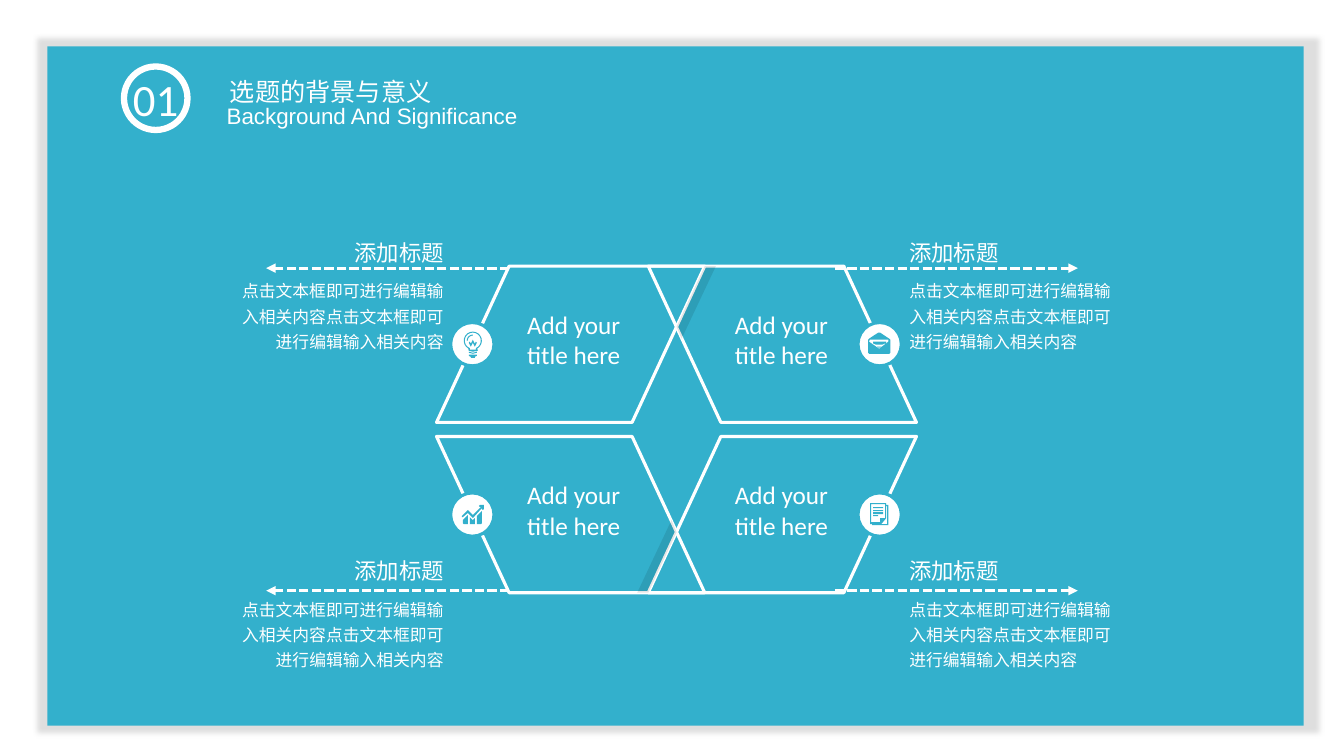
from dataclasses import dataclass
from math import cos, radians, sin

from lxml import etree
from pptx import Presentation
from pptx import util as u
from pptx.dml.color import RGBColor
from pptx.enum import dml, shapes, text
from pptx.oxml.ns import qn

PX = 9144  # EMU per px, 100 px to the inch


@dataclass(frozen=True)
class Theme:
    teal: RGBColor = RGBColor(0x33, 0xB0, 0xCC)
    white: RGBColor = RGBColor(0xFF, 0xFF, 0xFF)
    black: RGBColor = RGBColor(0, 0, 0)
    shadow: str = "A6A6A6"
    latin: str = "Calibri"
    sans: str = "Arial"
    chinese: str = "Noto Sans CJK SC"
    number: int = 32
    title: int = 18
    heading: int = 16
    body: int = 12
    thin: float = 2.25
    thick: float = 4.5


THEME = Theme()
LEFT, RIGHT = text.PP_ALIGN.LEFT, text.PP_ALIGN.RIGHT
BODY = "点击文本框即可进行编辑输入相关内容" * 2


def arc(radius, start, end):
    """Points on a circle round the bulb's centre, angles in degrees."""
    steps = 16
    angles = [radians(start + (end - start) * i / steps) for i in range(steps + 1)]
    return [(9 + radius * cos(a), 10 + radius * sin(a)) for a in angles]


def bar(left, top, right, bottom):
    return [(left, top), (right, top), (right, bottom), (left, bottom)]


# Icons: offset inside the disc, then outlines in px
BULB = (13, 8), [
    arc(9, 120, 420) + [(14, 20), (9, 21), (5, 20)],
    arc(8, 112, 428) + [(12, 19), (6, 19)],
    arc(6, 180, 270) + arc(5, 270, 180),
    [(11, 13), (9, 9), (7, 13), (6, 11), (5, 12),
     (7, 16), (9, 12), (11, 16), (13, 12), (12, 11)],
    [(5, 21), (5, 22), (9, 23), (13, 22), (13, 21), (9, 22)],
    [(5, 24), (5, 25), (7, 26), (7, 27), (11, 27), (11, 26), (13, 25), (13, 24)],
]
ENVELOPE = (10, 10), [
    [(21, 6), (12, 0), (10, 0), (1, 6), (0, 7),
     (0, 20), (1, 21), (21, 21), (22, 20), (22, 7)],
    [(20, 9), (11, 16), (1, 9), (1, 8), (2, 7), (20, 7), (20, 8)],
    [(11, 15), (13, 14), (9, 14)],
    [(8, 12), (14, 12), (16, 11), (6, 11)],
    [(5, 10), (5, 11), (17, 11), (18, 10), (18, 9), (5, 9)],
]
GROWTH = (11, 12), [
    [(1, 18), (2, 19), (6, 19), (6, 10), (1, 15)],
    [(8, 12), (8, 19), (13, 19), (13, 13), (11, 15)],
    [(15, 11), (15, 19), (19, 19), (20, 18), (20, 6), (16, 10)],
    [(18, 0), (17, 1), (18, 2), (19, 2), (11, 10), (6, 5), (0, 11), (0, 12),
     (1, 12), (6, 8), (11, 13), (20, 3), (20, 4), (21, 5), (22, 4), (22, 0)],
]
PAPER = (12, 10), [
    bar(3, 4, 13, 5), bar(3, 7, 13, 8), bar(3, 9, 13, 11), bar(3, 12, 8, 13),
    [(16, 2), (16, 0), (0, 0), (0, 21), (2, 21), (2, 22), (18, 22), (18, 2)],
    [(1, 19), (1, 1), (15, 1), (15, 15), (10, 15), (10, 19)],
    [(17, 21), (3, 21), (11, 21), (16, 15), (16, 3), (17, 3)],
]


def paint(shape, fill=None, line=None, weight=THEME.thin):
    shape.shadow.inherit = False
    if fill is None:
        shape.fill.background()
    else:
        shape.fill.solid()
        shape.fill.fore_color.rgb = fill
    if line is None:
        shape.line.fill.background()
    else:
        shape.line.color.rgb = line
        shape.line.width = u.Pt(weight)


def add_preset(slide, kind, left, top, width, height, **look):
    shape = slide.shapes.add_shape(kind, *(v * PX for v in (left, top, width, height)))
    paint(shape, **look)
    return shape


def add_outline(slide, left, top, contours, **look):
    builder = None
    for contour in contours:
        first, *rest = [(x * PX, y * PX) for x, y in contour]
        if builder is None:
            builder = slide.shapes.build_freeform(*first, scale=1.0)
        else:
            builder.move_to(*first)
        builder.add_line_segments(rest, close=True)
    shape = builder.convert_to_shape(left * PX, top * PX)
    paint(shape, **look)
    return shape


def write(shape, lines, size, font, align=LEFT, spacing=None, wrap=True):
    frame = shape.text_frame
    frame.word_wrap = wrap
    frame.auto_size = text.MSO_AUTO_SIZE.NONE
    frame.text = lines
    for paragraph in frame.paragraphs:
        paragraph.alignment = align
        paragraph.line_spacing = spacing
        paragraph.font.size = u.Pt(size)
        paragraph.font.name = font
        paragraph.font.color.rgb = THEME.white
        properties = paragraph._p.pPr.find(qn("a:defRPr"))
        etree.SubElement(properties, qn("a:ea"), typeface=font)


def add_text(slide, left, top, width, height, *content, **style):
    box = slide.shapes.add_textbox(*(v * PX for v in (left, top, width, height)))
    write(box, *content, **style)
    return box


def add_arrow(slide, start, end, y):
    arrow = slide.shapes.add_connector(
        shapes.MSO_CONNECTOR.STRAIGHT, start * PX, y * PX, end * PX, y * PX)
    arrow.line.color.rgb = THEME.white
    arrow.line.width = u.Pt(THEME.thin)
    arrow.line.dash_style = dml.MSO_LINE.SQUARE_DOT
    etree.SubElement(arrow._element.spPr.find(qn("a:ln")), qn("a:tailEnd"),
                     type="triangle")
    etree.SubElement(arrow._element.spPr, qn("a:effectLst"))


def add_panel(slide, left, top, width, height):
    """Teal panel with a soft, slightly enlarged shadow."""
    panel = add_preset(slide, shapes.MSO_SHAPE.RECTANGLE, left, top, width, height,
                       fill=THEME.teal)
    effects = panel._element.spPr.find(qn("a:effectLst"))
    shadow = etree.SubElement(
        effects, qn("a:outerShdw"), blurRad=str(u.Pt(4)), dist=str(u.Pt(2)), dir="0",
        sx="102000", sy="102000", algn="ctr", rotWithShape="0")
    color = etree.SubElement(shadow, qn("a:srgbClr"), val=THEME.shadow)
    etree.SubElement(color, qn("a:alpha"), val="36000")


def add_header(slide, left, top):
    # Number in a ring
    add_preset(slide, shapes.MSO_SHAPE.OVAL, left, top, 63, 63,
               line=THEME.white, weight=THEME.thick)
    add_text(slide, left - 12, top, 87, 64, "01", THEME.number, THEME.latin,
             align=text.PP_ALIGN.CENTER)
    # Title and subtitle
    title = slide.shapes.title
    title.left, title.top = (left + 95) * PX, (top - 25) * PX
    title.width, title.height = 222 * PX, 71 * PX
    title.text_frame.vertical_anchor = text.MSO_ANCHOR.TOP
    write(title, "选题的背景与意义", THEME.title, THEME.chinese, spacing=2.0, wrap=False)
    subtitle = add_text(slide, left + 92, top + 30, 330, 37,
                        "Background And Significance", THEME.heading, THEME.sans)
    subtitle.text_frame.vertical_anchor = text.MSO_ANCHOR.MIDDLE


def add_quadrant(slide, left, top, on_right, at_bottom, icon):
    """Slanted box, icon disc, label, arrow and notes; mirrored by side."""
    width, height, slant, disc = 266, 155, 72, 43
    corners = [(slant, 0), (width, 0), (width - slant, height), (0, height)]
    corners = [(width - x if on_right else x, height - y if at_bottom else y)
               for x, y in corners]
    add_outline(slide, left, top, [corners], line=THEME.white)
    # Icon on the outer edge
    disc_left = left + (width - 15 - disc if on_right else 14)
    add_preset(slide, shapes.MSO_SHAPE.OVAL, disc_left, top + 56, disc, disc,
               fill=THEME.white, line=THEME.teal)
    (dx, dy), contours = icon
    add_outline(slide, disc_left + dx, top + 56 + dy, contours, fill=THEME.teal)
    add_text(slide, left + (76 if on_right else 80), top + 38, 140, 71,
             "Add your\ntitle here", THEME.title, THEME.latin)
    # Arrow and notes outside the box
    arrow_y = top + (height - 2 if at_bottom else 2)
    start = left + (185 if on_right else slant)
    add_arrow(slide, start, start + (241 if on_right else -241), arrow_y)
    heading_top = arrow_y - (38 if at_bottom else 34)
    edge = left + (249 if on_right else 17)
    align = LEFT if on_right else RIGHT
    for y, w, h, words, size, spacing in (
            (heading_top, 202, 37, "添加标题", THEME.heading, None),
            (heading_top + 37, 227, 86, BODY, THEME.body, 1.25)):
        add_text(slide, edge if on_right else edge - w, y, w, h, words, size,
                 THEME.chinese, align=align, spacing=spacing)


def add_diagram(slide, left, top):
    icons = ((BULB, ENVELOPE), (GROWTH, PAPER))
    for row, pair in enumerate(icons):
        for column, icon in enumerate(pair):
            add_quadrant(slide, left + 210 * column, top + 169 * row, column, row, icon)
    # Shaded strips at the crossings, one the half turn of the other
    strip = [(277, 0), (243, 72), (238, 60), (266, 0)]
    for points in (strip, [(476 - x, 324 - y) for x, y in strip]):
        shade = add_outline(slide, left, top, [points], fill=THEME.black)
        color = shade._element.spPr.find(qn("a:solidFill"))[0]
        etree.SubElement(color, qn("a:alpha"), val="10000")


def main():
    presentation = Presentation()
    presentation.slide_width, presentation.slide_height = 1333 * PX, 750 * PX
    slide = presentation.slides.add_slide(presentation.slide_layouts[5])
    add_panel(slide, 47, 46, 1246, 674)
    # Keep the title in front of the panel
    slide.shapes._spTree.append(slide.shapes.title._element)
    add_header(slide, 123, 66)
    add_diagram(slide, 433, 264)
    presentation.save("out.pptx")


if __name__ == "__main__":
    main()
